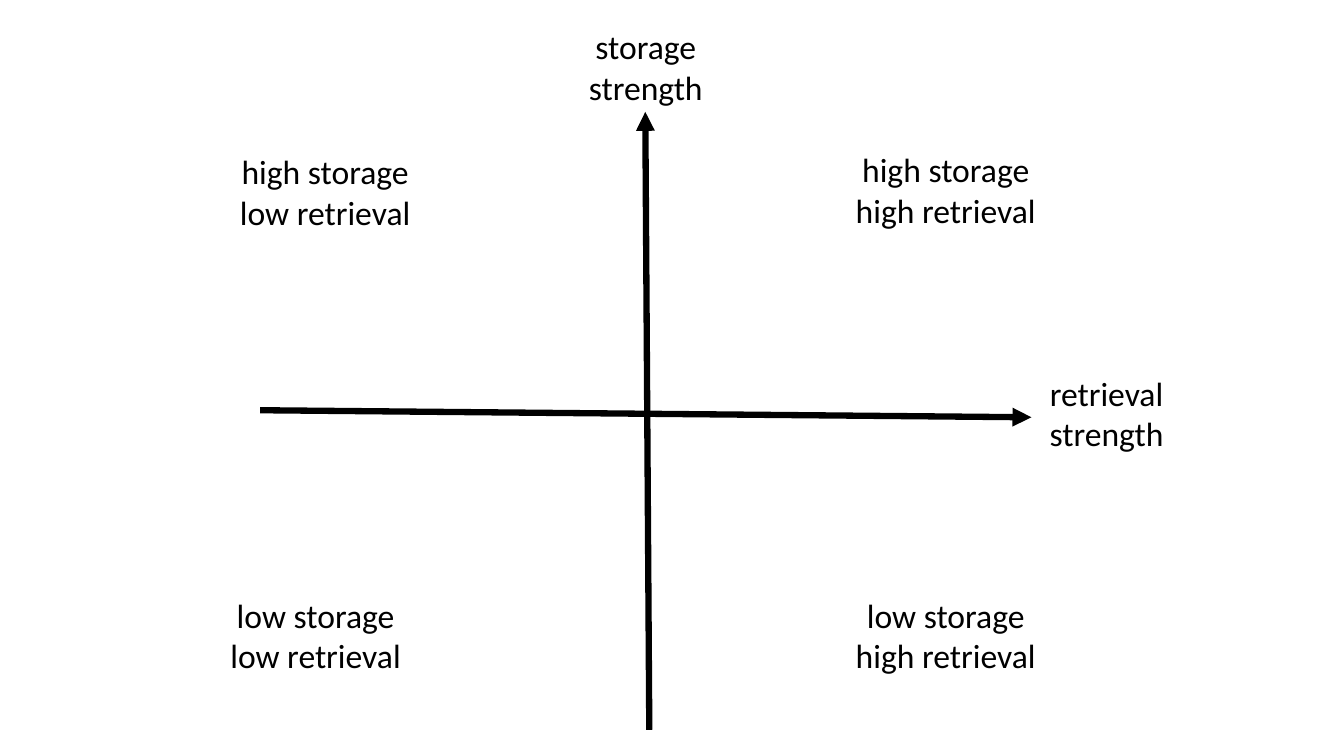
from lxml import etree
from pptx import Presentation
from pptx.dml.color import RGBColor
from pptx.enum.shapes import MSO_CONNECTOR
from pptx.enum.text import MSO_AUTO_SIZE, PP_ALIGN
from pptx.oxml.ns import qn
from pptx.util import Inches, Pt

STRAIGHT = MSO_CONNECTOR.STRAIGHT
CENTER = PP_ALIGN.CENTER
GROW = MSO_AUTO_SIZE.SHAPE_TO_FIT_TEXT

BLACK = "000000"
LABEL_HEIGHT = 0.91

# Axes: start x, start y, end x, end y
AXES = [
    (6.44, 7.24, 6.4, 1.11),
    (2.58, 4.07, 10.23, 4.14),
]

# Labels: left, top, width, paragraphs
AXIS_LABELS = [
    (5.43, 0.21, 1.95, ["storage strength"]),
    (10, 3.65, 1.95, ["retrieval strength"]),
]
QUADRANT_LABELS = [
    (2.25, 1.45, 1.95, ["high storage", "low retrieval"]),
    (8.32, 5.85, 2.12, ["low storage", "high retrieval"]),
    (2.07, 5.85, 2.12, ["low storage", "low retrieval"]),
    (8.32, 1.43, 2.12, ["high storage", "high retrieval"]),
]


def color(hex_value):
    return RGBColor.from_string(hex_value)


def add_axis(slide, x1, y1, x2, y2, width=4.5):
    axis = slide.shapes.add_connector(
        STRAIGHT, Inches(x1), Inches(y1), Inches(x2), Inches(y2))
    axis.line.width = Pt(width)
    axis.line.color.rgb = color(BLACK)
    # Arrowhead at the end, and no theme shadow
    line_xml = axis.line._get_or_add_ln()
    etree.SubElement(line_xml, qn("a:tailEnd"), type="triangle")
    etree.SubElement(axis._element.spPr, qn("a:effectLst"))


def write_text(paragraph, text, size=24, font="Calibri", fill=BLACK, align=CENTER):
    paragraph.alignment = align
    run = paragraph.add_run()
    run.text = text
    run.font.size = Pt(size)
    run.font.name = font
    run.font.color.rgb = color(fill)


def add_label(slide, left, top, width, lines):
    label = slide.shapes.add_textbox(
        Inches(left), Inches(top), Inches(width), Inches(LABEL_HEIGHT))
    frame = label.text_frame
    frame.word_wrap = True
    frame.auto_size = GROW
    for index, line in enumerate(lines):
        paragraph = frame.add_paragraph() if index else frame.paragraphs[0]
        write_text(paragraph, line)


def main():
    deck = Presentation()
    deck.slide_width = Inches(13.33)
    deck.slide_height = Inches(7.5)
    slide = deck.slides.add_slide(deck.slide_layouts[6])

    # Crossed axes
    for axis in AXES:
        add_axis(slide, *axis)

    # Axis names and quadrant descriptions
    for label in AXIS_LABELS + QUADRANT_LABELS:
        add_label(slide, *label)

    deck.save("out.pptx")


if __name__ == "__main__":
    main()
